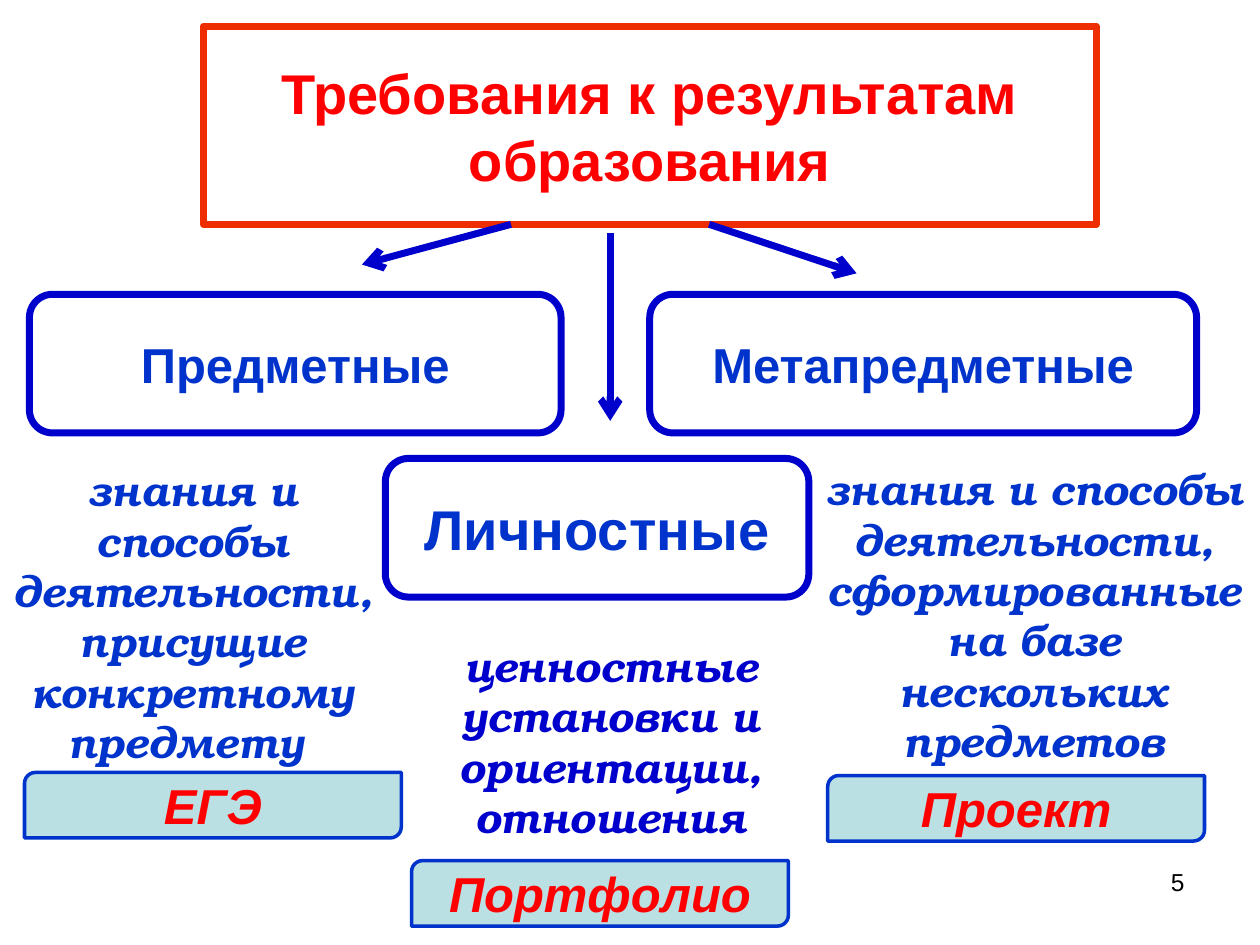
from lxml import etree
from pptx import Presentation
from pptx.dml.color import RGBColor
from pptx.enum.shapes import MSO_CONNECTOR, MSO_SHAPE
from pptx.enum.text import MSO_ANCHOR, MSO_AUTO_SIZE, PP_ALIGN
from pptx.oxml.ns import qn
from pptx.util import Pt

PROCESS = MSO_SHAPE.FLOWCHART_ALTERNATE_PROCESS
DIAGONAL = MSO_SHAPE.ROUND_2_DIAG_RECTANGLE
STRAIGHT = MSO_CONNECTOR.STRAIGHT
CENTER, RIGHT = PP_ALIGN.CENTER, PP_ALIGN.RIGHT
TOP, MIDDLE = MSO_ANCHOR.TOP, MSO_ANCHOR.MIDDLE
NO_FIT = MSO_AUTO_SIZE.NONE

WHITE = RGBColor(0xFF, 0xFF, 0xFF)
BLACK = RGBColor(0, 0, 0)
RED = RGBColor(0xFF, 0, 0)
ORANGE = RGBColor(0xEE, 0x2D, 0)
NAVY = RGBColor(0, 0, 0xCC)
BLUE = RGBColor(0, 0x33, 0xCC)
PALE = RGBColor(0xBB, 0xE0, 0xE3)


class SlideBuilder:
    sans = "Arial"
    serif = "TeX Gyre Bonum"
    thick = Pt(4)
    thin = Pt(2)

    def __init__(self, slide):
        self.slide = slide

    def set_text(self, shape, text, size, color, font=sans, bold=True,
                 italic=False, align=CENTER, anchor=MIDDLE):
        frame = shape.text_frame
        frame.word_wrap = True
        frame.auto_size = NO_FIT
        frame.vertical_anchor = anchor
        paragraph = frame.paragraphs[0]
        paragraph.alignment = align
        run = paragraph.add_run()
        run.text = text
        run.font.name = font
        run.font.size = Pt(size)
        run.font.bold = bold
        run.font.italic = italic
        run.font.color.rgb = color

    def paint(self, shape, fill, outline, width):
        shape.fill.solid()
        shape.fill.fore_color.rgb = fill
        shape.line.color.rgb = outline
        shape.line.width = width

    def heading(self, text, left, top, width, height):
        title = self.slide.shapes.title
        title.left, title.top = Pt(left), Pt(top)
        title.width, title.height = Pt(width), Pt(height)
        outline = etree.SubElement(title.element.spPr, qn("a:prstGeom"),
                                   prst="flowChartAlternateProcess")
        etree.SubElement(outline, qn("a:avLst"))
        self.paint(title, WHITE, ORANGE, self.thick)
        self.set_text(title, text, 32, RED)

    def box(self, kind, left, top, width, height, fill, outline, line_width):
        shape = self.slide.shapes.add_shape(
            kind, Pt(left), Pt(top), Pt(width), Pt(height))
        shape.shadow.inherit = False
        self.paint(shape, fill, outline, line_width)
        return shape

    def category(self, text, left, top, width, size):
        shape = self.box(PROCESS, left, top, width, 79.2,
                         WHITE, NAVY, self.thick)
        self.set_text(shape, text, size, BLUE)

    def assessment(self, text, left, top):
        shape = self.box(DIAGONAL, left, top, 215.3, 37.4,
                         PALE, BLUE, self.thin)
        self.set_text(shape, text, 28, RED, italic=True)

    def label(self, text, left, top, width, height, size, color, **style):
        shape = self.slide.shapes.add_textbox(
            Pt(left), Pt(top), Pt(width), Pt(height))
        self.set_text(shape, text, size, color, anchor=TOP, **style)

    def description(self, text, left, top, width, height, color):
        self.label(text, left, top, width, height, 24, color,
                   font=self.serif, italic=True)

    def arrow(self, x1, y1, x2, y2):
        connector = self.slide.shapes.add_connector(
            STRAIGHT, Pt(x1), Pt(y1), Pt(x2), Pt(y2))
        connector.line.color.rgb = NAVY
        connector.line.width = self.thick
        properties = connector.element.spPr
        etree.SubElement(properties.find(qn("a:ln")),
                         qn("a:tailEnd"), type="arrow")
        etree.SubElement(properties, qn("a:effectLst"))


def main():
    deck = Presentation()
    deck.slide_width, deck.slide_height = Pt(720), Pt(540)
    page = SlideBuilder(deck.slides.add_slide(deck.slide_layouts[5]))

    page.label("5", 516.2, 491.8, 167.8, 37.4, 14, BLACK,
               bold=False, align=RIGHT)
    page.heading("Требования к результатам образования",
                 116.2, 15, 510.2, 113.2)

    for name, left, top, width, size in (
        ("Метапредметные", 371.3, 168.2, 312.5, 28),
        ("Личностные", 220.2, 262, 242, 32),
        ("Предметные", 16.8, 168.2, 303.8, 28),
    ):
        page.category(name, left, top, width, size)

    for ends in ((292, 128.2, 206.8, 151.2),
                 (405.2, 128.2, 489.5, 156.2),
                 (348.7, 133.2, 348.7, 240.5)):
        page.arrow(*ends)

    page.description("ценностные установки и ориентации, отношения",
                     220.6, 362.3, 257, 123.8, NAVY)
    page.description("знания и способы деятельности, сформированные "
                     "на базе нескольких предметов",
                     462.2, 261.4, 257.8, 181.4, BLUE)
    page.description("знания и способы деятельности, присущие "
                     "конкретному предмету ",
                     0, 262, 220.6, 181.4, BLUE)

    for name, left, top in (("Портфолио", 235.2, 491.8),
                            ("ЕГЭ", 14, 441.4),
                            ("Проект", 473, 443.2)):
        page.assessment(name, left, top)

    deck.save("out.pptx")


if __name__ == "__main__":
    main()
